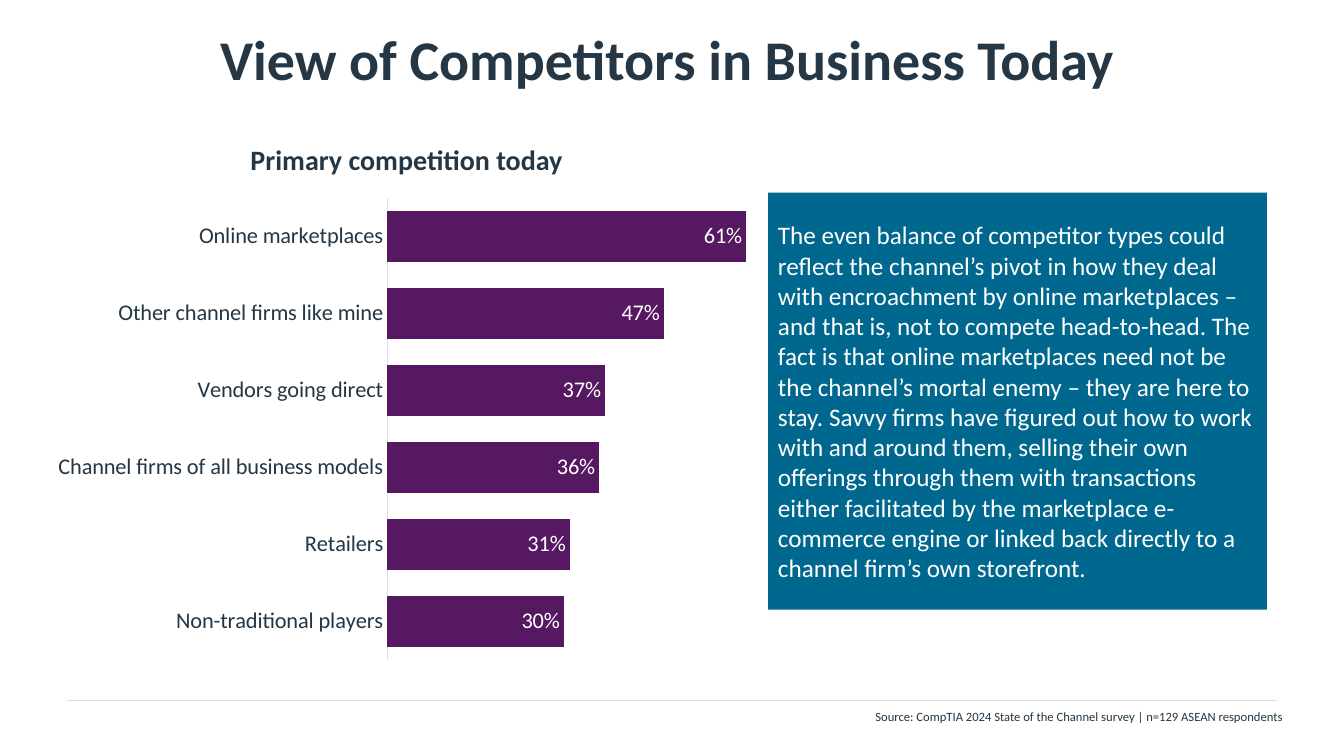
from pptx import Presentation
from pptx.chart.data import CategoryChartData
from pptx.dml.color import RGBColor
from pptx.enum.chart import XL_CHART_TYPE as ChartType, XL_LABEL_POSITION as LabelPos, XL_TICK_MARK as Tick
from pptx.enum.shapes import MSO_CONNECTOR as Connector, MSO_SHAPE as Shape
from pptx.enum.text import MSO_ANCHOR as Anchor, MSO_AUTO_SIZE as AutoSize, PP_ALIGN as Align
from pptx.oxml import parse_xml
from pptx.oxml.ns import nsdecls, qn
from pptx.util import Pt

COLORS = {"paper": "FEFFFE", "ink": "253644", "rule": "DADFE1",
          "axis": "D8E1EA", "bar": "561961", "panel": "00688E"}
FONT = "Calibri"

COMPETITION = {
    "Online marketplaces": 0.61,
    "Other channel firms like mine": 0.47,
    "Vendors going direct": 0.37,
    "Channel firms of all business models": 0.36,
    "Retailers": 0.31,
    "Non-traditional players": 0.30,
}
COMMENTARY = (
    "The even balance of competitor types could reflect the channel’s pivot in how they deal "
    "with encroachment by online marketplaces – and that is, not to compete head-to-head. "
    "The fact is that online marketplaces need not be the channel’s mortal enemy – they are "
    "here to stay. Savvy firms have figured out how to work with and around them, selling "
    "their own offerings through them with transactions either facilitated by the marketplace "
    "e-commerce engine or linked back directly to a channel firm’s own storefront."
)


def rgb(name):
    return RGBColor.from_string(COLORS[name])


def points(lengths):
    return [Pt(length) for length in lengths]


class SlideBuilder:
    def __init__(self, slide):
        self.slide = slide
        slide.background.fill.solid()
        slide.background.fill.fore_color.rgb = rgb("paper")

    def style(self, font, size, color, bold=False):
        font.name, font.size, font.bold = FONT, Pt(size), bold
        font.color.rgb = rgb(color)

    def set_text(self, shape, text, size, color, align, bold=False):
        frame = shape.text_frame
        frame.word_wrap = True
        frame.text = text
        paragraph = frame.paragraphs[0]
        paragraph.alignment = align
        self.style(paragraph.runs[0].font, size, color, bold)
        return frame

    def heading(self, text, box, size):
        shape = self.slide.shapes.add_textbox(*points(box))
        frame = self.set_text(shape, text, size, "ink", Align.CENTER, bold=True)
        frame.vertical_anchor = Anchor.MIDDLE
        frame.margin_left = 0

    def source_note(self, text, box):
        shape = self.slide.shapes.add_textbox(*points(box))
        frame = self.set_text(shape, text, 9, "ink", Align.RIGHT)
        frame.auto_size = AutoSize.SHAPE_TO_FIT_TEXT

    def panel(self, text, box):
        shape = self.slide.shapes.add_shape(Shape.RECTANGLE, *points(box))
        shape.shadow.inherit = False
        shape.fill.solid()
        shape.fill.fore_color.rgb = rgb("panel")
        shape.line.fill.background()
        frame = self.set_text(shape, text, 18, "paper", Align.LEFT)
        frame.vertical_anchor = Anchor.MIDDLE
        frame.paragraphs[0].space_after = Pt(10)

    def rule(self, ends):
        line = self.slide.shapes.add_connector(Connector.STRAIGHT, *points(ends))
        line.line.color.rgb = rgb("rule")
        line.line.width = Pt(0.5)
        line._element.spPr.append(parse_xml(f"<a:effectLst {nsdecls('a')}/>"))

    def bar_chart(self, shares, box, plot_area):
        data = CategoryChartData(number_format="0%")
        data.categories = list(reversed(shares))
        data.add_series("Series 1", list(reversed(shares.values())))
        chart = self.slide.shapes.add_chart(ChartType.BAR_CLUSTERED, *points(box), data).chart
        chart.has_legend = chart.has_title = False
        self.style(chart.font, 10, "ink")

        categories = chart.category_axis
        categories.major_tick_mark = categories.minor_tick_mark = Tick.NONE
        categories.has_major_gridlines = False
        categories.format.line.color.rgb = rgb("axis")
        categories.format.line.width = Pt(0.75)
        self.style(categories.tick_labels.font, 16, "ink")

        values = chart.value_axis
        values.minimum_scale, values.maximum_scale = 0, 0.63
        values.has_major_gridlines = values.visible = False

        bars = chart.plots[0]
        bars.gap_width = 51
        bars.vary_by_categories = False
        bars.series[0].format.fill.solid()
        bars.series[0].format.fill.fore_color.rgb = rgb("bar")
        bars.has_data_labels = True
        labels = bars.data_labels
        labels.show_value = True
        labels.position = LabelPos.INSIDE_END
        labels.number_format, labels.number_format_is_linked = "0%", False
        self.style(labels.font, 16, "paper")
        self.place_plot(chart, plot_area)

    def place_plot(self, chart, plot_area):
        """Fix the inner plot area, given as fractions of the chart."""
        area = chart._chartSpace.find(".//" + qn("c:plotArea"))
        for layout in area.findall(qn("c:layout")):
            area.remove(layout)
        sizes = "".join(f'<c:{key} val="{part}"/>' for key, part in zip("xywh", plot_area))
        area.insert(0, parse_xml(
            f'<c:layout {nsdecls("c")}><c:manualLayout><c:layoutTarget val="inner"/>'
            f'<c:xMode val="edge"/><c:yMode val="edge"/>{sizes}</c:manualLayout></c:layout>'))


def main():
    deck = Presentation()
    deck.slide_width, deck.slide_height = Pt(960), Pt(540)
    page = SlideBuilder(deck.slides.add_slide(deck.slide_layouts[6]))
    page.rule((48, 500.4, 912, 500.4))
    page.heading("View of Competitors in Business Today", (48, -3.6, 864, 90), 40)
    page.source_note("Source: CompTIA 2024 State of the Channel survey | n=129 ASEAN respondents",
                     (456, 502.5, 467, 18))
    page.bar_chart(COMPETITION, (22.3, 141, 519, 348), (0.49, 0, 0.51, 0.95))
    page.heading("Primary competition today", (78, 69, 432, 90), 20)
    page.panel(COMMENTARY, (548.6, 137.5, 356.4, 298))
    deck.save("out.pptx")


if __name__ == "__main__":
    main()
